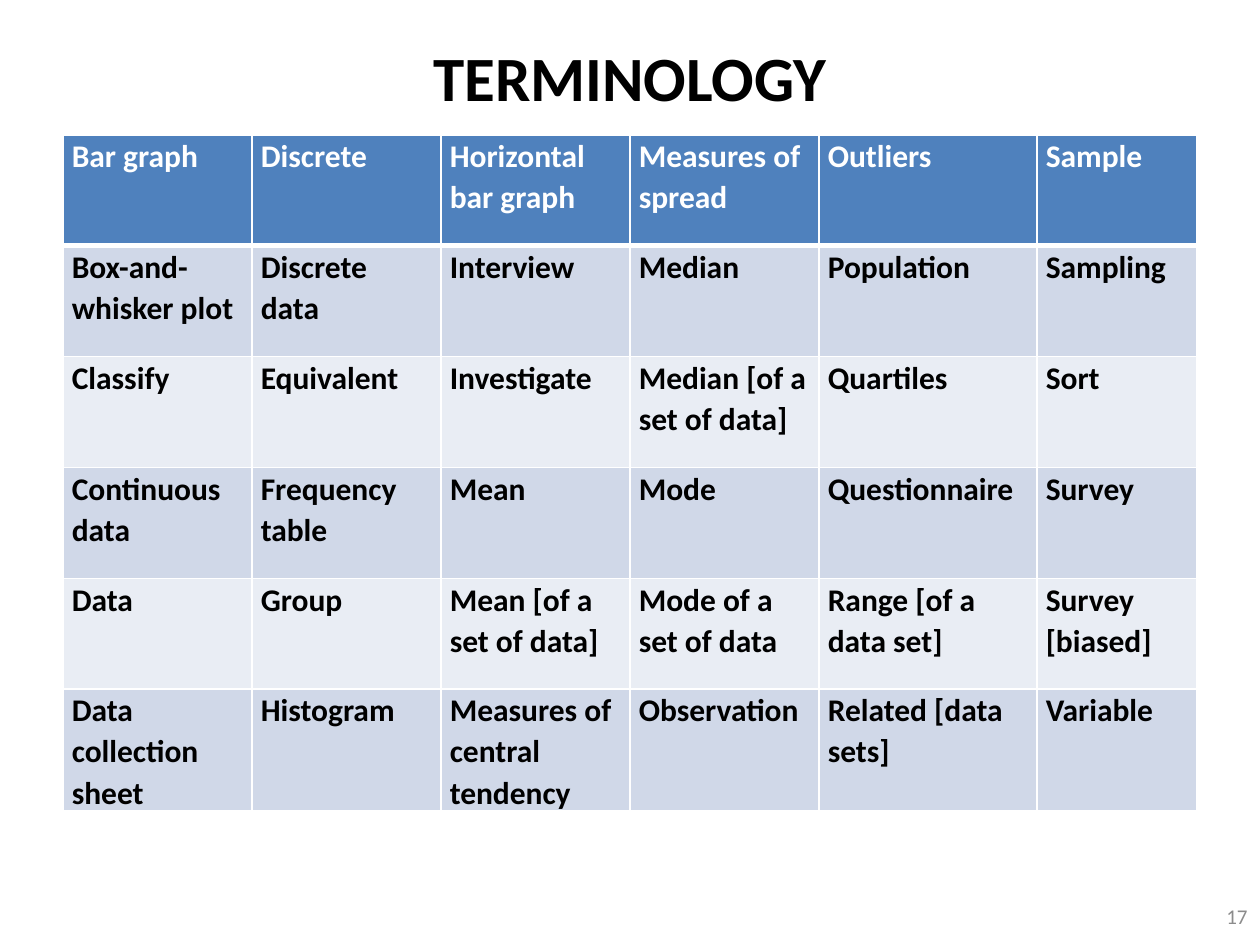
from lxml import etree
from pptx import Presentation, util as u
from pptx.dml.color import RGBColor
from pptx.enum import text
from pptx.oxml import ns

WHITE = RGBColor(0xFF, 0xFF, 0xFF)
BLACK = RGBColor(0, 0, 0)
GREY = RGBColor(0x8C, 0x8C, 0x8C)
HEADER = RGBColor(0x4F, 0x81, 0xBD)
BANDS = [RGBColor(0xE9, 0xED, 0xF4), RGBColor(0xD0, 0xD8, 0xE8)]

TERMS = [
    ["Bar graph", "Discrete", "Horizontal bar graph", "Measures of spread", "Outliers", "Sample"],
    ["Box-and-whisker plot", "Discrete data", "Interview", "Median", "Population", "Sampling"],
    ["Classify", "Equivalent", "Investigate", "Median [of a set of data]", "Quartiles", "Sort"],
    ["Continuous data", "Frequency table", "Mean", "Mode", "Questionnaire", "Survey"],
    ["Data", "Group", "Mean [of a set of data]", "Mode of a set of data", "Range [of a data set]", "Survey [biased]"],
    ["Data collection sheet", "Histogram", "Measures of central tendency", "Observation", "Related [data sets]", "Variable"],
]
COLUMNS = [1.5, 1.5, 1.5, 1.5, 1.73, 1.27]
ROW = 0.88


def style(p, size, color, bold):
    p.font.name = "Calibri"
    p.font.size = u.Pt(size)
    p.font.bold = bold
    p.font.color.rgb = color


def add_border(cell, side, width):
    ln = etree.SubElement(cell._tc.get_or_add_tcPr(), ns.qn("a:" + side), w=str(u.Pt(width)))
    fill = etree.SubElement(ln, ns.qn("a:solidFill"))
    etree.SubElement(fill, ns.qn("a:srgbClr"), val=str(WHITE))


prs = Presentation()
prs.slide_width, prs.slide_height = u.Inches(10), u.Inches(7.5)
s = prs.slides.add_slide(prs.slide_layouts[6])

for words, box, size, color, bold, align in [
    ("TERMINOLOGY", (0.5, 0.3, 9, 0.61), 36, BLACK, True, text.PP_ALIGN.CENTER),
    ("17", (7.67, 7.07, 2.33, 0.4), 12, GREY, False, text.PP_ALIGN.RIGHT),
]:
    tf = s.shapes.add_textbox(*map(u.Inches, box)).text_frame
    tf.word_wrap = True
    tf.vertical_anchor = text.MSO_ANCHOR.MIDDLE
    p = tf.paragraphs[0]
    p.text = words
    p.alignment = align
    style(p, size, color, bold)

table = s.shapes.add_table(
    len(TERMS), len(COLUMNS), u.Inches(0.5), u.Inches(1.07),
    u.Inches(sum(COLUMNS)), u.Inches(ROW * len(TERMS)),
).table
for column, width in zip(table.columns, COLUMNS):
    column.width = u.Inches(width)

for i, terms in enumerate(TERMS):
    table.rows[i].height = u.Inches(ROW)
    for j, term in enumerate(terms):
        cell = table.cell(i, j)
        cell.margin_left = cell.margin_right = u.Inches(0.07)
        cell.margin_top = cell.margin_bottom = 0
        for side in ("lnL", "lnR", "lnT", "lnB"):
            under_header = (i, side) in [(0, "lnB"), (1, "lnT")]
            add_border(cell, side, 3 if under_header else 1)
        cell.fill.solid()
        cell.fill.fore_color.rgb = BANDS[i % 2] if i else HEADER
        p = cell.text_frame.paragraphs[0]
        p.text = term
        p.line_spacing = 1.07
        p.space_after = u.Pt(8)
        style(p, 18, BLACK if i else WHITE, True)

prs.save("out.pptx")
